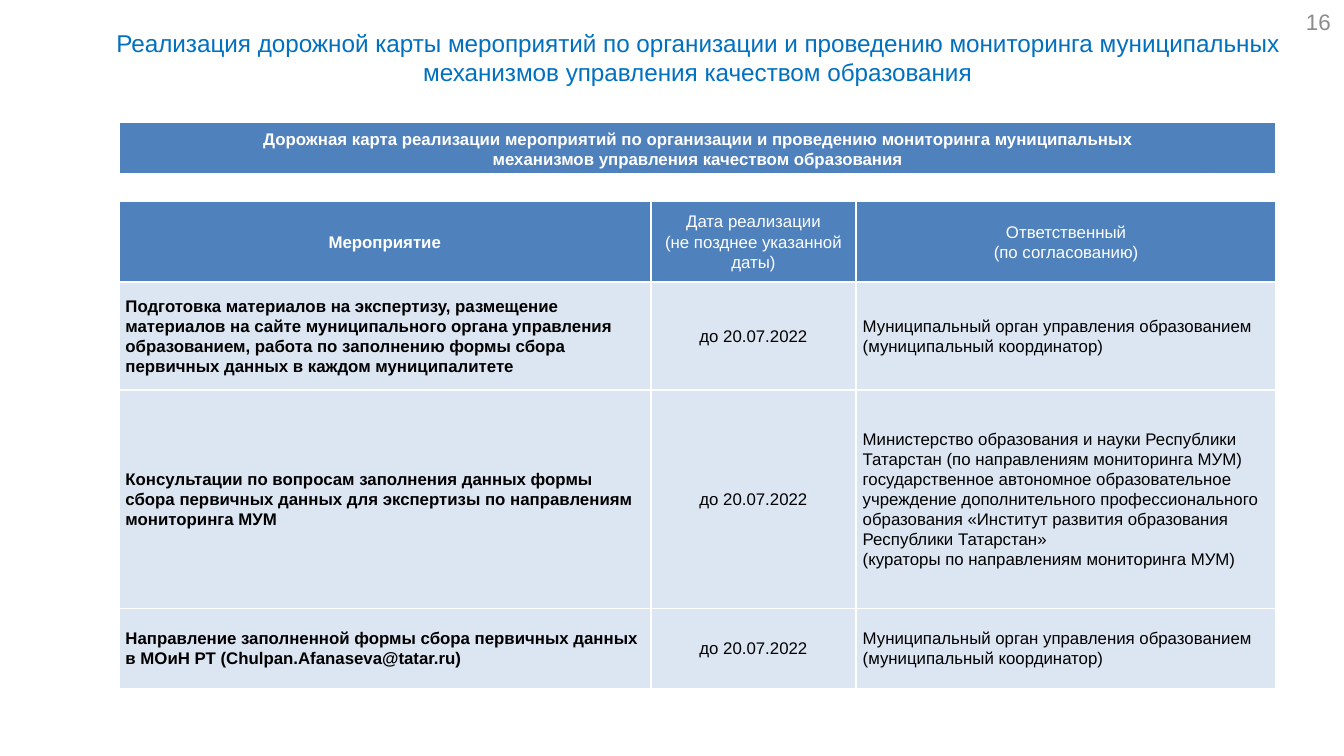
from lxml.etree import SubElement
from pptx import Presentation
from pptx.dml.color import RGBColor as Rgb
from pptx.enum.text import MSO_ANCHOR as Anchor, PP_ALIGN as Align
from pptx.oxml.ns import qn
from pptx.util import Pt

COLORS = {"blue": "4F81BD", "pale": "DCE6F2", "white": "FFFFFF",
          "black": "000000", "title": "0070C0", "number": "8C8C8C"}
COLUMNS = [285, 103, 7, 7, 185, 33]
ROWS = [28.5, 14, 43, 58, 117, 43]
SPANS = [(0, 0), (1, 2), (3, 5)]
DEADLINE = ["до 20.07.2022"]
COORDINATOR = ["Муниципальный орган управления образованием (муниципальный координатор)"]
TITLE = ["Реализация дорожной карты мероприятий по организации и проведению "
         "мониторинга муниципальных механизмов управления качеством образования"]
BANNER = ["Дорожная карта реализации мероприятий по организации и проведению "
          "мониторинга муниципальных", "механизмов управления качеством образования"]
HEADER = [["Мероприятие"],
          ["Дата реализации", "(не позднее указанной даты)"],
          ["Ответственный", "(по согласованию)"]]
EVENTS = [
    [["Подготовка материалов на экспертизу, размещение материалов на сайте "
      "муниципального органа управления образованием, работа по заполнению "
      "формы сбора первичных данных в каждом муниципалитете"], DEADLINE, COORDINATOR],
    [["Консультации по вопросам заполнения данных формы сбора первичных данных "
      "для экспертизы по направлениям мониторинга МУМ"], DEADLINE,
     ["Министерство образования и науки Республики Татарстан "
      "(по направлениям мониторинга МУМ)",
      "государственное автономное образовательное учреждение дополнительного "
      "профессионального образования «Институт развития образования "
      "Республики Татарстан»",
      "(кураторы по направлениям мониторинга МУМ)"]],
    [["Направление заполненной формы сбора первичных данных в МОиН РТ "
      "(Chulpan.Afanaseva@tatar.ru)"], DEADLINE, COORDINATOR],
]


def set_all(target, values):
    """Set every attribute named in a dict of values."""
    for name, value in values.items():
        setattr(target, name, value)


def write(frame, lines, size, color, align, bold=False, spacing=1.0):
    """Fill a text frame with one paragraph per line."""
    for index, line in enumerate(lines):
        para = frame.add_paragraph() if index else frame.paragraphs[0]
        set_all(para, {"alignment": align, "line_spacing": spacing})
        span = para.add_run()
        span.text = line
        set_all(span.font, {"name": "Arial", "size": Pt(size), "bold": bold})
        span.font.color.rgb = Rgb.from_string(COLORS[color])


def add_label(page, box, lines, size, color, align, anchor):
    """Place a wrapped text box."""
    frame = page.shapes.add_textbox(*map(Pt, box)).text_frame
    set_all(frame, {"word_wrap": True, "vertical_anchor": anchor})
    write(frame, lines, size, color, align)


def style_cell(cell, fill, bottom=1):
    """Give a cell its insets, white borders and fill."""
    set_all(cell, {"margin_left": Pt(3.6), "margin_right": Pt(3.6),
                   "margin_top": 0, "margin_bottom": 0,
                   "vertical_anchor": Anchor.MIDDLE})
    properties = cell._tc.get_or_add_tcPr()
    for side, width in {"L": 1, "R": 1, "T": 1, "B": bottom}.items():
        line = SubElement(properties, qn(f"a:ln{side}"), w=str(Pt(width)))
        paint = SubElement(line, qn("a:solidFill"))
        SubElement(paint, qn("a:srgbClr"), val=COLORS["white"])
    cell.fill.solid()
    cell.fill.fore_color.rgb = Rgb.from_string(COLORS[fill])


def add_roadmap(page, box):
    """Build the roadmap table with its banner, header and events."""
    table = page.shapes.add_table(len(ROWS), len(COLUMNS), *map(Pt, box)).table
    for column, width in zip(table.columns, COLUMNS):
        column.width = Pt(width)
    fills = ["blue", "white", "blue", "pale", "pale", "pale"]
    for index, (row, height) in enumerate(zip(table.rows, ROWS)):
        row.height = Pt(height)
        for cell in row.cells:
            style_cell(cell, fills[index], 1 if index else 3)
    for cell in table.rows[1].cells:
        SubElement(cell.text_frame.paragraphs[0]._p, qn("a:endParaRPr"), sz="900")
    table.cell(1, 2).merge(table.cell(1, 3))
    table.cell(0, 0).merge(table.cell(0, len(COLUMNS) - 1))
    write(table.cell(0, 0).text_frame, BANNER, 9, "white", Align.CENTER, True, 1.07)
    for index, entries in enumerate([HEADER, *EVENTS], 2):
        head = index == 2
        for (first, last), lines in zip(SPANS, entries):
            cell = table.cell(index, first)
            if last > first:
                cell.merge(table.cell(index, last))
            align = Align.CENTER if head or first == 1 else Align.LEFT
            write(cell.text_frame, lines, 9, "white" if head else "black",
                  align, first == 0, 1.07)


def main():
    """Create and save the deck."""
    deck = Presentation()
    set_all(deck, {"slide_width": Pt(720), "slide_height": Pt(405)})
    page = deck.slides.add_slide(deck.slide_layouts[6])
    add_label(page, (552, 0.7, 168, 21.6), ["16"], 12, "number",
              Align.RIGHT, Anchor.MIDDLE)
    add_label(page, (54, 11.5, 639, 39), TITLE, 13, "title",
              Align.CENTER, Anchor.TOP)
    add_roadmap(page, (63.6, 65.5, sum(COLUMNS), sum(ROWS)))
    deck.save("out.pptx")


if __name__ == "__main__":
    main()
